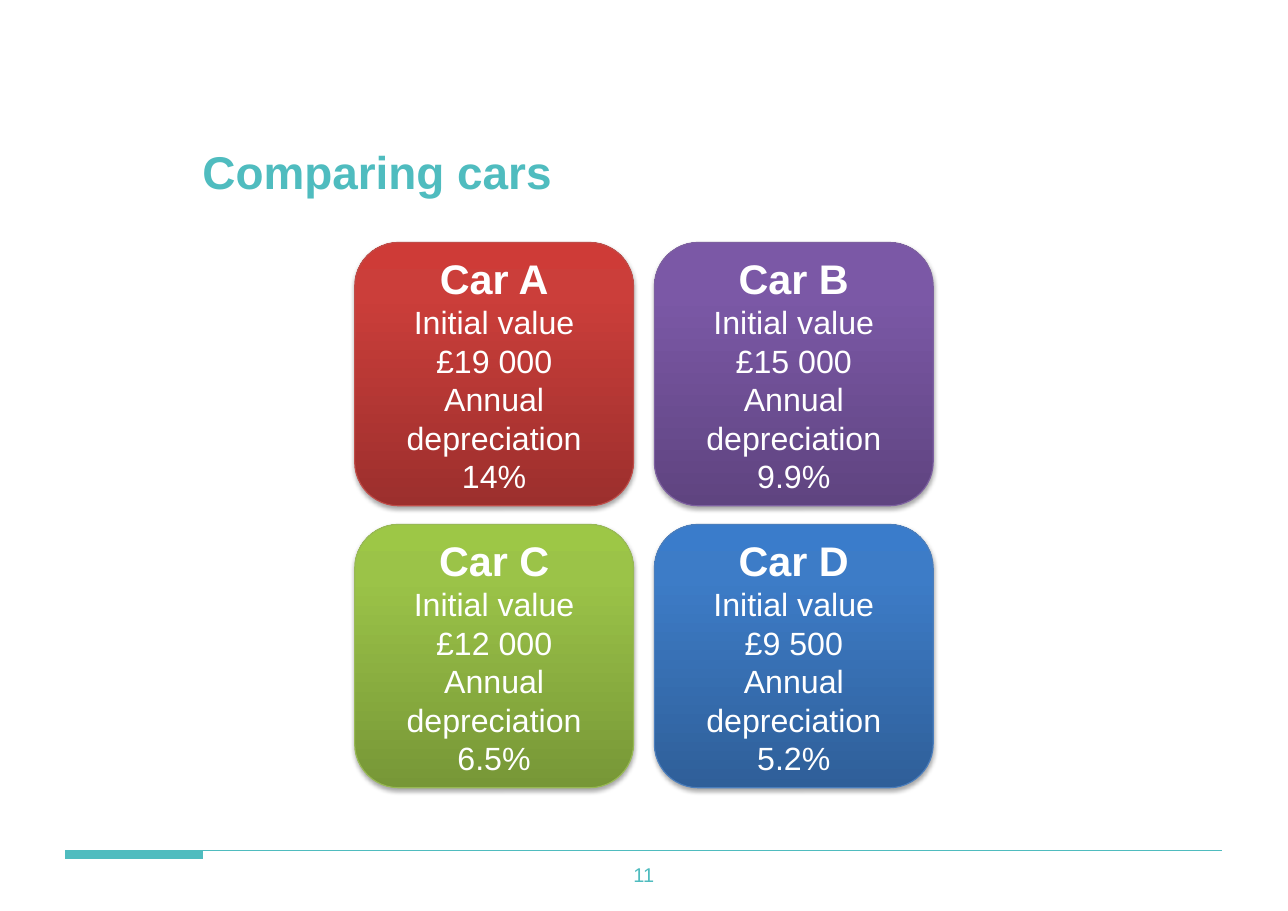
from copy import deepcopy

from lxml import etree
from pptx import Presentation
from pptx.dml.color import RGBColor
from pptx.enum.shapes import MSO_CONNECTOR, MSO_SHAPE
from pptx.enum.text import MSO_ANCHOR, PP_ALIGN
from pptx.oxml.ns import qn
from pptx.util import Cm, Pt

LINE = MSO_CONNECTOR.STRAIGHT
RECT, ROUND_RECT = MSO_SHAPE.RECTANGLE, MSO_SHAPE.ROUNDED_RECTANGLE
TOP, MIDDLE = MSO_ANCHOR.TOP, MSO_ANCHOR.MIDDLE
LEFT, CENTER = PP_ALIGN.LEFT, PP_ALIGN.CENTER

FONT, TEAL, WHITE = "Arial", "4FBCBF", "FFFFFF"
STOPS = (0, 0.8, 1)

# name, initial value, annual depreciation, gradient from the bottom up, outline
CARS = [
    ("Car A", "£19 000", "14%", ("9C2F2D", "CB3E3A", "CE3B37"), "BF4C48"),
    ("Car B", "£15 000", "9.9%", ("5F4480", "7B58A6", "7C57A8"), "7D60A0"),
    ("Car C", "£12 000", "6.5%", ("779737", "9BC348", "9DC746"), "98B955"),
    ("Car D", "£9 500", "5.2%", ("2F5F99", "3D7CC7", "3A7CCB"), "4B7EBC"),
]


def rgb(value):
    return RGBColor.from_string(value)


def add_text(p, text, size=21, color=WHITE, bold=False, align=CENTER):
    p.alignment = align
    r = p.add_run()
    r.text = text
    r.font.name, r.font.size, r.font.bold = FONT, Pt(size), bold
    r.font.color.rgb = rgb(color)


def set_frame(tf, inset_x, inset_y, anchor):
    tf.word_wrap = True
    tf.vertical_anchor = anchor
    tf.margin_left = tf.margin_right = Cm(inset_x)
    tf.margin_top = tf.margin_bottom = Cm(inset_y)


def add_label(slide, box, text, inset=(0, 0), anchor=TOP, **fmt):
    tf = slide.shapes.add_textbox(*map(Cm, box)).text_frame
    set_frame(tf, *inset, anchor)
    add_text(tf.paragraphs[0], text, **fmt)


def set_gradient(s, colors):
    s.fill.gradient()
    s.fill.gradient_angle = 90
    stops = s._element.spPr.find(qn("a:gradFill")).find(qn("a:gsLst"))
    stops.append(deepcopy(stops[-1]))
    for stop, position, color in zip(s.fill.gradient_stops, STOPS, colors):
        stop.position = position
        stop.color.rgb = rgb(color)


def add_shadow(s):
    s.shadow.inherit = False
    effects = s._element.spPr.find(qn("a:effectLst"))
    shadow = etree.SubElement(
        effects, qn("a:outerShdw"), blurRad=str(Pt(3.1)), dist=str(Pt(1.8)),
        dir="5400000", rotWithShape="0")
    color = etree.SubElement(shadow, qn("a:srgbClr"), val="000000")
    etree.SubElement(color, qn("a:alpha"), val="35000")


def add_card(slide, left, top, car):
    name, value, depreciation, colors, outline = car
    s = slide.shapes.add_shape(
        ROUND_RECT, Cm(left), Cm(top), Cm(6.43), Cm(6.07))
    set_gradient(s, colors)
    s.line.color.rgb = rgb(outline)
    s.line.width = Pt(0.75)
    add_shadow(s)
    tf = s.text_frame
    set_frame(tf, 0.28, 0.15, MIDDLE)
    add_text(tf.paragraphs[0], name, size=27, bold=True)
    for text in ("Initial value", value, "Annual depreciation", depreciation):
        add_text(tf.add_paragraph(), text)


def add_footer(slide):
    # Rule with a thick start
    c = slide.shapes.add_connector(
        LINE, Cm(1.5), Cm(19.6), Cm(28.17), Cm(19.6))
    c.line.color.rgb = rgb(TEAL)
    c.line.width = Pt(1)
    etree.SubElement(c._element.spPr, qn("a:effectLst"))
    s = slide.shapes.add_shape(RECT, Cm(1.5), Cm(19.6), Cm(3.18), Cm(0.2))
    s.shadow.inherit = False
    s.fill.solid()
    s.fill.fore_color.rgb = rgb(TEAL)
    s.line.fill.background()
    # Page number
    add_label(slide, (11.38, 19.6, 6.93, 1.12), "11", inset=(0.25, 0.13),
              anchor=MIDDLE, size=13, color=TEAL)


def main():
    prs = Presentation()
    prs.slide_width, prs.slide_height = Cm(29.7), Cm(21)
    slide = prs.slides.add_slide(prs.slide_layouts[6])

    # Title
    add_label(slide, (4.67, 3.3, 20.32, 1.63), "Comparing cars",
              size=30, color=TEAL, bold=True, align=LEFT)

    # Two by two grid of cars
    for i, car in enumerate(CARS):
        row, col = divmod(i, 2)
        add_card(slide, 8.18 + col * 6.91, 5.59 + row * 6.5, car)

    add_footer(slide)
    prs.save("out.pptx")


if __name__ == "__main__":
    main()
